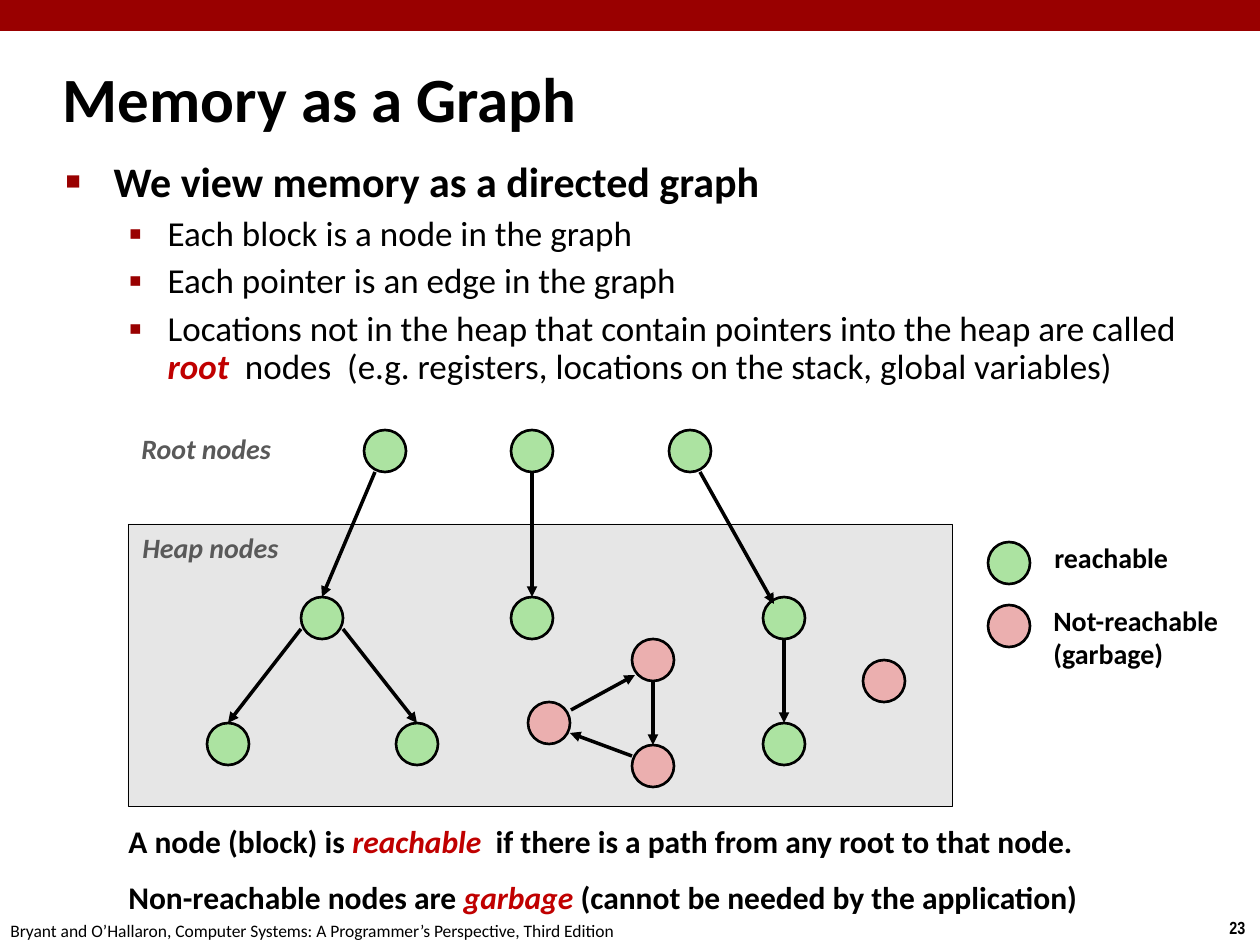
from lxml.etree import SubElement
from pptx import Presentation
from pptx.dml.color import RGBColor
from pptx.enum.shapes import MSO_CONNECTOR as Connector, MSO_SHAPE as Preset
from pptx.enum.text import MSO_ANCHOR as Anchor, MSO_AUTO_SIZE as AutoSize, PP_ALIGN as Align
from pptx.oxml.ns import qn
from pptx.util import Emu, Pt

EMU_PER_PX = 914400 / 126
RADIUS = 21
BLACK, RED, ACCENT, GREY = "000000", "990000", "C00000", "595959"
GREEN, PINK, HEAP_FILL = "ACE3A1", "EBAFAF", "E6E6E6"

# Node centres in px, by colour
REACHABLE = {
    "root left": (385, 451), "root middle": (532, 451), "root right": (690, 451),
    "left": (322, 618), "middle": (532, 618), "right": (784, 618),
    "left child": (228, 744), "right child": (417, 744), "lower right": (784, 744),
    "legend reachable": (1009, 563),
}
GARBAGE = {
    "cycle top": (653, 660), "cycle bottom": (653, 766), "cycle left": (549, 723),
    "alone": (884, 681), "legend garbage": (1009, 626),
}

# Edges: start node, offset from its centre, end node, offset from its centre
TOP, BOTTOM = (0, -RADIUS), (0, RADIUS)
EDGES = [
    ("root left", (-10, RADIUS), "left", TOP),
    ("root middle", BOTTOM, "middle", TOP),
    ("root right", (10, RADIUS), "right", (-10, -14)),
    ("left", (-RADIUS, 11), "left child", TOP),
    ("left", (RADIUS, 11), "right child", TOP),
    ("right", BOTTOM, "lower right", TOP),
    ("cycle top", BOTTOM, "cycle bottom", TOP),
    ("cycle bottom", (-RADIUS, -10), "cycle left", (RADIUS, 10)),
    ("cycle left", (22, -13), "cycle top", (-18, 15)),
]

# Text as (level, runs); each run is (text, emphasised)
BULLETS = [
    (0, [("We view memory as a directed graph", False)]),
    (1, [("Each block is a node in the graph", False)]),
    (1, [("Each pointer is an edge in the graph", False)]),
    (1, [("Locations not in the heap that contain pointers into the heap are called ", False),
         ("root", True),
         ("  nodes  (e.g. registers, locations on the stack, global variables)", False)]),
]
# Level: size, bold, line spacing, space before, margin, hanging indent, bullet, bullet size
LEVELS = [
    (24, True, 0.85, 12.5, 48, 48, "■", 60),
    (20, False, 0.9, 5.6, 102, 39, "▪", 110),
]
CONCLUSIONS = [
    [("A node (block) is ", False), ("reachable", True),
     ("  if there is a path from any root to that node.", False)],
    [("Non-reachable nodes are ", False), ("garbage ", True),
     ("(cannot be needed by the application)", False)],
]

# Left, top, width, height, text, size, colour, bold, italic, font
LABELS = [
    (129, 425, 159, 47, "Root nodes", 16, GREY, True, True, "Calibri"),
    (130, 524, 164, 47, "Heap nodes", 16, GREY, True, True, "Calibri"),
    (1042, 534, 140, 47, "reachable", 16, BLACK, True, False, "Calibri"),
    (1041, 597, 193, 81, "Not-reachable\n(garbage)", 16, BLACK, True, False, "Calibri"),
    (1217, 911, 43, 34, "23", 10, BLACK, True, False, "Arial Narrow"),
    (-2, 914, 640, 34,
     "Bryant and O’Hallaron, Computer Systems: A Programmer’s Perspective, Third Edition",
     10, BLACK, False, False, "Calibri"),
]


def px(length):
    return Emu(round(length * EMU_PER_PX))


def color(value):
    return RGBColor.from_string(value)


def place(shape, left, top, width, height):
    shape.left, shape.top, shape.width, shape.height = map(px, (left, top, width, height))


def set_font(font, size, value=BLACK, bold=False, italic=False, name="Calibri"):
    font.name, font.size, font.bold, font.italic = name, Pt(size), bold, italic
    font.color.rgb = color(value)


def set_spacing(paragraph, line, before):
    paragraph.line_spacing = line
    paragraph.space_before = Pt(before)


def set_bullet(paragraph, margin, hanging, character, percent):
    properties = paragraph._p.get_or_add_pPr()
    properties.set("marL", str(px(margin)))
    properties.set("indent", str(-px(hanging)))
    SubElement(SubElement(properties, qn("a:buClr")), qn("a:srgbClr"), val=RED)
    SubElement(properties, qn("a:buSzPct"), val=str(percent * 1000))
    SubElement(properties, qn("a:buChar"), char=character)


def add_runs(paragraph, runs):
    for text, emphasised in runs:
        run = paragraph.add_run()
        run.text = text
        if emphasised:
            run.font.bold = run.font.italic = True
            run.font.color.rgb = color(ACCENT)


def next_paragraph(frame, index):
    return frame.add_paragraph() if index else frame.paragraphs[0]


def add_preset(slide, preset, left, top, width, height, fill, line_width=None):
    shape = slide.shapes.add_shape(preset, *map(px, (left, top, width, height)))
    shape.shadow.inherit = False
    shape.fill.solid()
    shape.fill.fore_color.rgb = color(fill)
    if line_width:
        shape.line.color.rgb = color(BLACK)
        shape.line.width = Pt(line_width)
    else:
        shape.line.fill.background()


def add_node(slide, center, fill):
    x, y = center
    add_preset(slide, Preset.OVAL, x - RADIUS, y - RADIUS, 2 * RADIUS, 2 * RADIUS, fill, 1.5)


def add_edge(slide, start, end):
    edge = slide.shapes.add_connector(Connector.STRAIGHT, *map(px, start + end))
    edge.line.color.rgb = color(BLACK)
    edge.line.width = Pt(2)
    SubElement(edge.line._get_or_add_ln(), qn("a:tailEnd"), type="triangle")
    SubElement(edge._element.spPr, qn("a:effectLst"))


def add_label(slide, left, top, width, height, text, size, value, bold, italic, name):
    box = slide.shapes.add_textbox(*map(px, (left, top, width, height)))
    box.text_frame.word_wrap = False
    box.text_frame.auto_size = AutoSize.SHAPE_TO_FIT_TEXT
    paragraph = box.text_frame.paragraphs[0]
    paragraph.text = text
    set_font(paragraph.font, size, value, bold, italic, name)


def fill_title(title):
    place(title, 50, 63, 873, 79)
    frame = title.text_frame
    frame.auto_size = AutoSize.NONE
    frame.vertical_anchor = Anchor.MIDDLE
    paragraph = frame.paragraphs[0]
    paragraph.text = "Memory as a Graph"
    paragraph.alignment = Align.LEFT
    paragraph.line_spacing = 0.87
    set_font(paragraph.font, 36, bold=True)


def fill_body(body):
    place(body, 53, 157, 1167, 213)
    frame = body.text_frame
    frame.auto_size = AutoSize.NONE
    for index, (level, runs) in enumerate(BULLETS):
        size, bold, line, before, *bullet = LEVELS[level]
        paragraph = next_paragraph(frame, index)
        paragraph.level = level
        set_spacing(paragraph, line, before)
        set_bullet(paragraph, *bullet)
        set_font(paragraph.font, size, bold=bold)
        add_runs(paragraph, runs)


def add_conclusions(slide):
    frame = slide.shapes.add_textbox(*map(px, (116, 819, 1021, 116))).text_frame
    frame.word_wrap = True
    for index, runs in enumerate(CONCLUSIONS):
        paragraph = next_paragraph(frame, index)
        set_spacing(paragraph, 0.95, 11.2)
        set_font(paragraph.font, 18, bold=True)
        add_runs(paragraph, runs)


def add_graph(slide):
    for nodes, fill in ((REACHABLE, GREEN), (GARBAGE, PINK)):
        for center in nodes.values():
            add_node(slide, center, fill)
    centers = {**REACHABLE, **GARBAGE}
    for start, start_offset, end, end_offset in EDGES:
        (x1, y1), (x2, y2) = centers[start], centers[end]
        add_edge(slide, (x1 + start_offset[0], y1 + start_offset[1]),
                 (x2 + end_offset[0], y2 + end_offset[1]))


def main():
    presentation = Presentation()
    presentation.slide_width, presentation.slide_height = px(1260), px(945)
    slide = presentation.slides.add_slide(presentation.slide_layouts[1])

    # Title and bullet list
    fill_title(slide.shapes.title)
    fill_body(slide.placeholders[1])

    # Top band and heap area
    add_preset(slide, Preset.RECTANGLE, 0, 0, 1260, 31, RED)
    add_preset(slide, Preset.RECTANGLE, 128, 524, 825, 283, HEAP_FILL, 0.5)

    # Graph, legend, labels and footer
    add_graph(slide)
    for label in LABELS:
        add_label(slide, *label)
    add_conclusions(slide)

    presentation.save("out.pptx")


if __name__ == "__main__":
    main()
